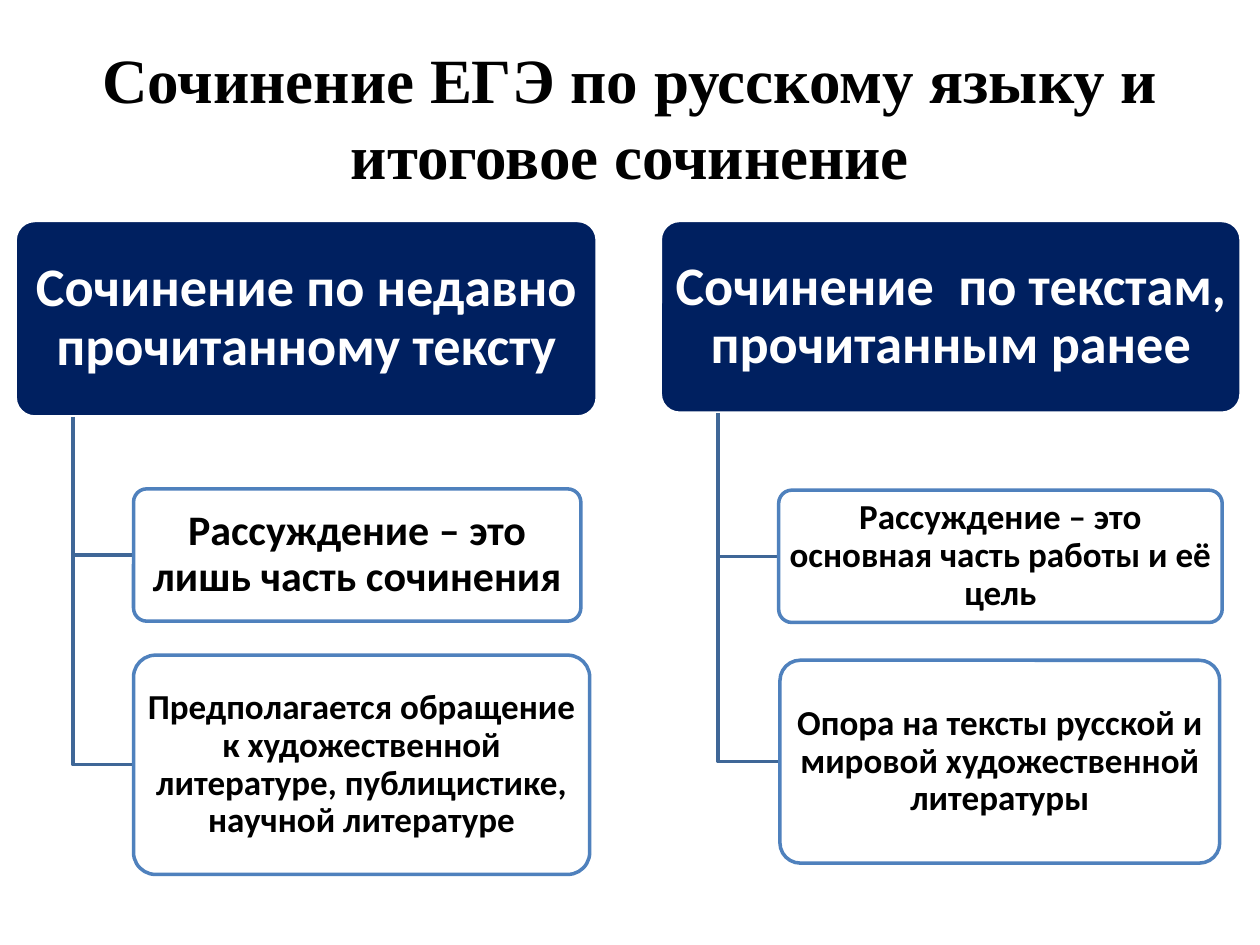
"""Builds a slide comparing two kinds of essay as two branching trees."""
import pptx
import pptx.dml.color
import pptx.enum.shapes
import pptx.enum.text
import pptx.util

COLORS = {"navy": "002060", "white": "FFFFFF", "black": "000000",
          "border": "4F81BD", "branch": "3F6797"}
TOP = 1.75
STEM_INDENT = 0.46

TREES = [
    {"left": 0.12, "width": 4.62, "height": 1.56,
     "heading": "Сочинение по недавно прочитанному тексту",
     "points": [
         ("Рассуждение – это лишь часть сочинения", 24, (1.06, 3.88, 3.55, 1.05)),
         ("Предполагается обращение к художественной литературе, "
          "публицистике, научной литературе", 20, (1.06, 5.2, 3.62, 1.74))]},
    {"left": 5.24, "width": 4.61, "height": 1.53,
     "heading": "Сочинение  по текстам, прочитанным ранее",
     "points": [
         ("Рассуждение – это основная часть работы и её цель", 20,
          (6.18, 3.89, 3.52, 1.05)),
         ("Опора на тексты русской и мировой художественной литературы", 20,
          (6.19, 5.24, 3.49, 1.61))]},
]


def color(name):
    return pptx.dml.color.RGBColor.from_string(COLORS[name])


def style_paragraph(paragraph, font_name, size, ink):
    paragraph.alignment = pptx.enum.text.PP_ALIGN.CENTER
    paragraph.font.name = font_name
    paragraph.font.size = pptx.util.Pt(size)
    paragraph.font.bold = True
    paragraph.font.color.rgb = color(ink)


def style_line(shape, name):
    shape.shadow.inherit = False
    shape.line.color.rgb = color(name)
    shape.line.width = pptx.util.Pt(2)


def add_title(slide, text):
    title = slide.shapes.title
    title.left, title.top, title.width, title.height = map(
        pptx.util.Inches, (0.5, 0.3, 9, 1.25))
    title.text_frame.text = text
    title.text_frame.auto_size = pptx.enum.text.MSO_AUTO_SIZE.NONE
    title.text_frame.vertical_anchor = pptx.enum.text.MSO_ANCHOR.MIDDLE
    style_paragraph(title.text_frame.paragraphs[0], "Times New Roman", 36, "black")


def add_card(slide, box, text, size, fill, border, ink, inset):
    card = slide.shapes.add_shape(
        pptx.enum.shapes.MSO_SHAPE.ROUNDED_RECTANGLE, *map(pptx.util.Inches, box))
    card.adjustments[0] = 0.1
    card.fill.solid()
    card.fill.fore_color.rgb = color(fill)
    style_line(card, border)
    frame = card.text_frame
    frame.word_wrap = True
    frame.vertical_anchor = pptx.enum.text.MSO_ANCHOR.MIDDLE
    frame.margin_left = frame.margin_right = pptx.util.Inches(inset)
    frame.margin_top = frame.margin_bottom = pptx.util.Inches(0.03)
    frame.text = text
    paragraph = frame.paragraphs[0]
    paragraph.line_spacing = 0.9
    style_paragraph(paragraph, "Calibri", size, ink)


def add_branch(slide, stem, start, end, middle):
    corners = [tuple(map(pptx.util.Inches, corner))
               for corner in ((stem, start), (stem, middle), (end, middle))]
    builder = slide.shapes.build_freeform(*corners[0])
    builder.add_line_segments(corners[1:], close=False)
    branch = builder.convert_to_shape()
    branch.fill.background()
    style_line(branch, "branch")


def add_tree(slide, tree):
    heading_box = (tree["left"], TOP, tree["width"], tree["height"])
    add_card(slide, heading_box, tree["heading"], 31, "navy", "white", "white", 0.06)
    for text, size, box in tree["points"]:
        left, top, _, height = box
        add_branch(slide, tree["left"] + STEM_INDENT, TOP + tree["height"],
                   left, top + height / 2)
        add_card(slide, box, text, size, "white", "border", "black", 0.04)


def main():
    deck = pptx.Presentation()
    deck.slide_width = pptx.util.Inches(10)
    deck.slide_height = pptx.util.Inches(7.5)
    slide = deck.slides.add_slide(deck.slide_layouts[5])
    add_title(slide, "Сочинение ЕГЭ по русскому языку и итоговое сочинение")
    for tree in TREES:
        add_tree(slide, tree)
    deck.save("out.pptx")


if __name__ == "__main__":
    main()
